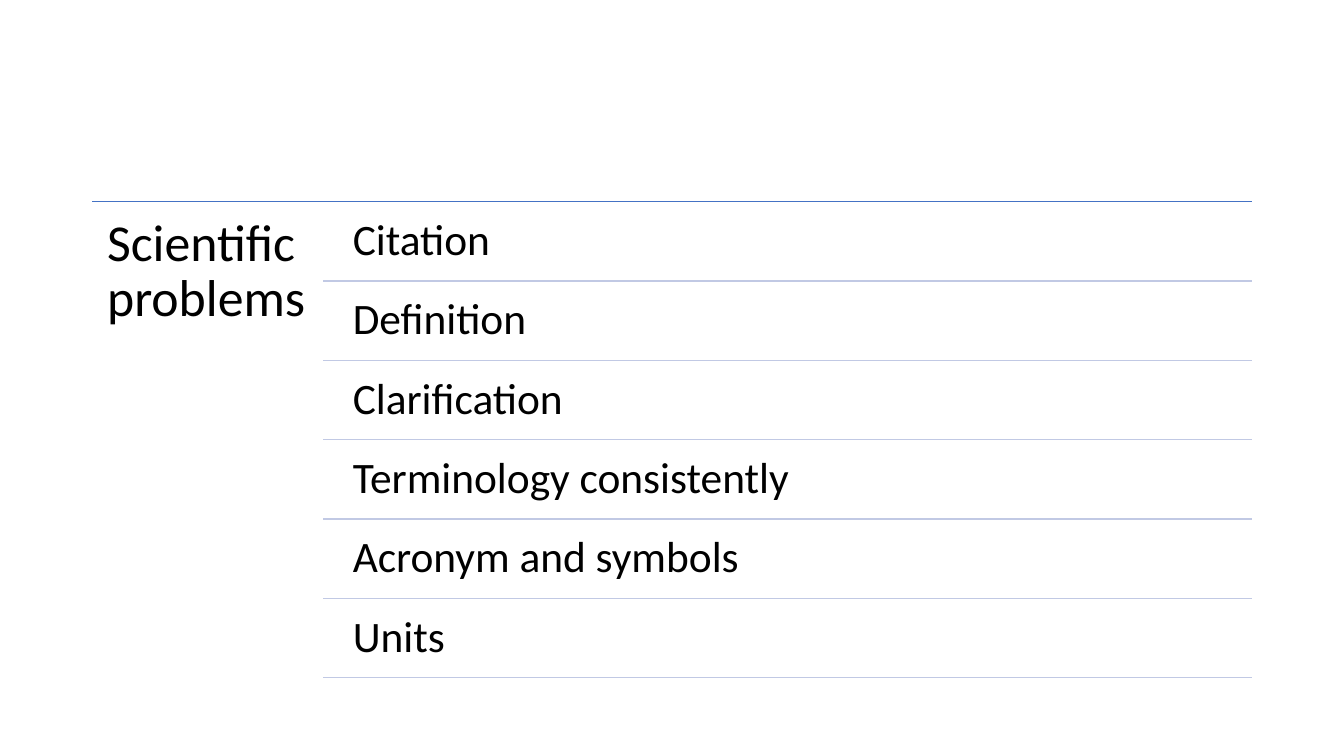
from dataclasses import dataclass

from lxml import etree
from pptx import Presentation
from pptx import util as u
from pptx.dml.color import RGBColor
from pptx.enum import shapes, text
from pptx.oxml.ns import qn

PX = 9525  # EMU per pixel, 96 pixels to the inch


@dataclass(frozen=True)
class Theme:
    font: str = "Calibri"
    ink: str = "000000"
    top_rule: str = "4472C4"
    row_rule: str = "C1C9E4"
    heading_size: int = 37
    item_size: int = 31
    rule_width: int = 1
    line_spacing: float = 0.9


THEME = Theme()
HEADING = "Scientific problems"
PROBLEMS = [
    "Citation",
    "Definition",
    "Clarification",
    "Terminology consistently",
    "Acronym and symbols",
    "Units",
]


def px(length):
    return u.Emu(round(length * PX))


def add_text(slide, words, left, top, width, height, *, size, inset):
    label = slide.shapes.add_textbox(px(left), px(top), px(width), px(height))
    frame = label.text_frame
    frame.word_wrap = True
    frame.vertical_anchor = text.MSO_ANCHOR.TOP
    frame.margin_left = frame.margin_right = px(inset)
    frame.margin_top = frame.margin_bottom = px(inset)
    paragraph = frame.paragraphs[0]
    paragraph.alignment = text.PP_ALIGN.LEFT
    paragraph.line_spacing = THEME.line_spacing
    run = paragraph.add_run()
    run.text = words
    run.font.name = THEME.font
    run.font.size = u.Pt(size)
    run.font.color.rgb = RGBColor.from_string(THEME.ink)


def add_rule(slide, left, right, y, color):
    rule = slide.shapes.add_connector(
        shapes.MSO_CONNECTOR.STRAIGHT, px(left), px(y), px(right), px(y))
    rule.line.color.rgb = RGBColor.from_string(color)
    rule.line.width = u.Pt(THEME.rule_width)
    etree.SubElement(rule.element.spPr, qn("a:effectLst"))


def add_ruled_list(slide, heading, items, left, top, width, height):
    """Place a heading beside rows of equal height, each closed by a rule."""
    heading_width = width // 5
    indent, row_height = 16, 72
    right = left + width
    rule_left = left + heading_width
    item_left = rule_left + indent
    gap = (height - len(items) * row_height) / (len(items) + 1)

    add_rule(slide, left, right, top, THEME.top_rule)
    add_text(slide, heading, left, top, heading_width, height,
             size=THEME.heading_size, inset=14)
    for index, item in enumerate(items):
        row_top = top + gap + index * (row_height + gap)
        add_text(slide, item, item_left, row_top, right - item_left, row_height,
                 size=THEME.item_size, inset=12)
        add_rule(slide, rule_left, right, row_top + row_height, THEME.row_rule)


def main():
    deck = Presentation()
    deck.slide_width, deck.slide_height = px(1280), px(720)
    slide = deck.slides.add_slide(deck.slide_layouts[6])
    add_ruled_list(slide, HEADING, PROBLEMS, 88, 192, 1104, 457)
    deck.save("out.pptx")


if __name__ == "__main__":
    main()
